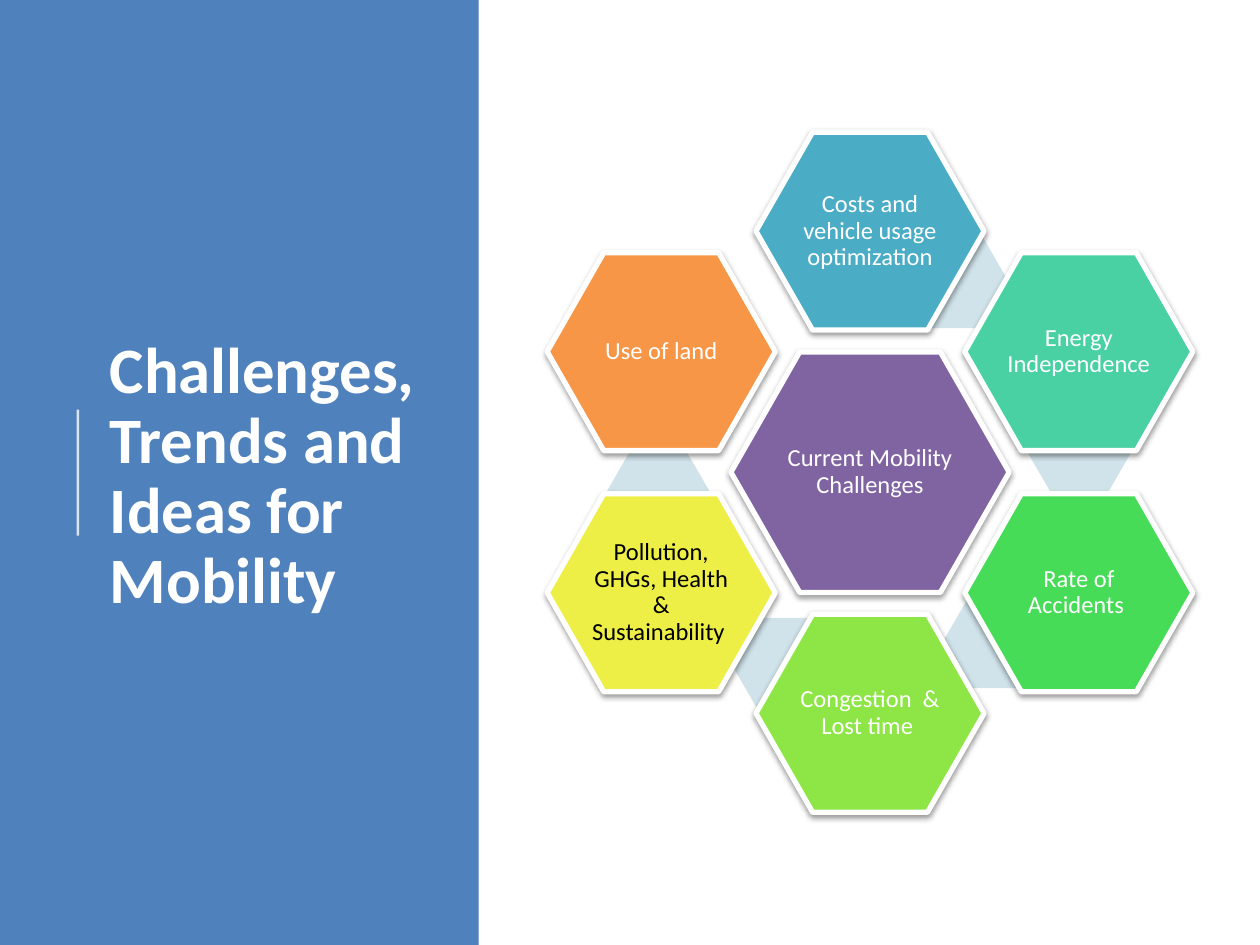
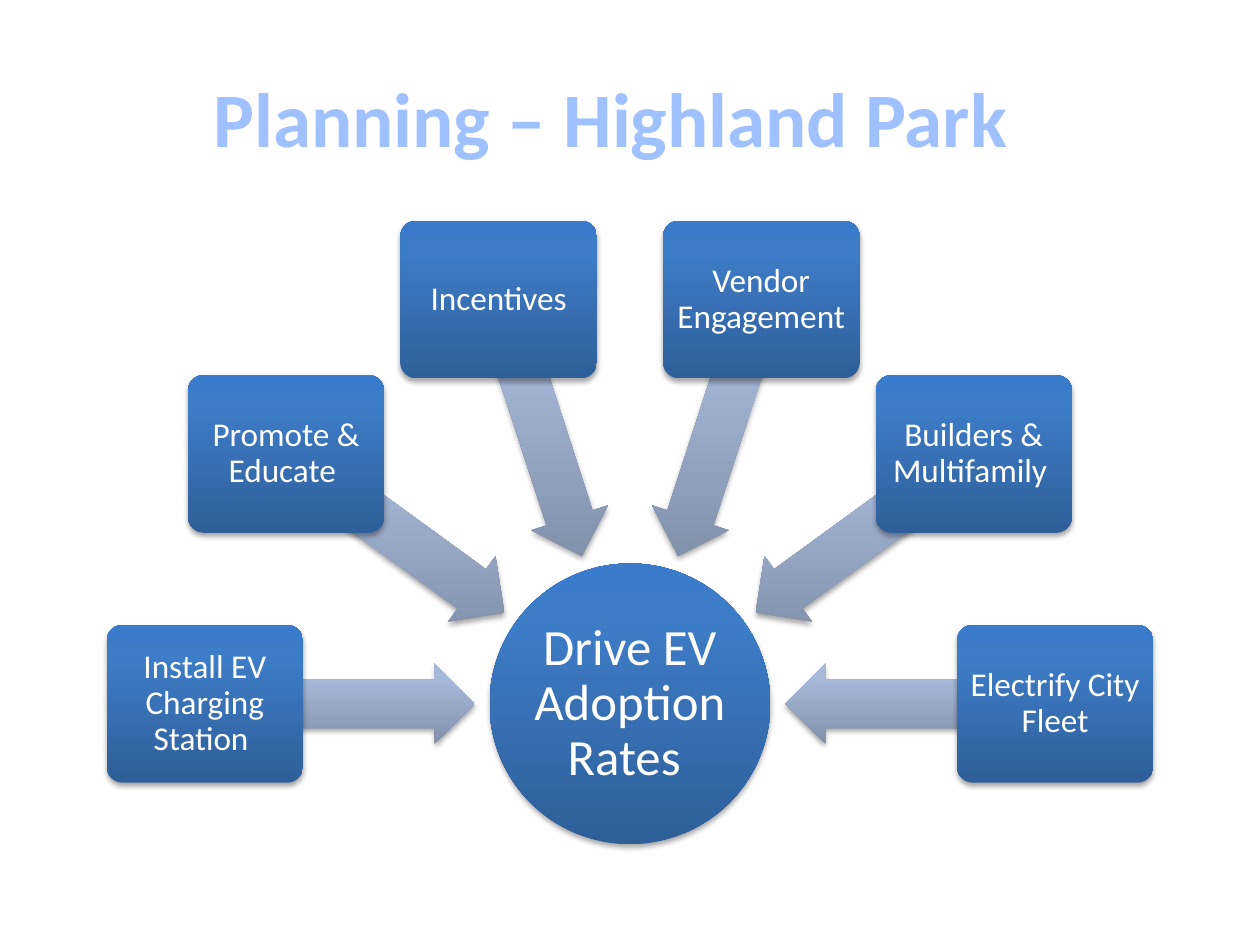
from math import cos, radians, sin

from lxml import etree
from pptx import Presentation
from pptx.dml.color import RGBColor
from pptx.enum import shapes, text
from pptx.oxml import parse_xml
from pptx.oxml.ns import nsdecls, qn
from pptx.util import Cm, Pt

FONT = "Calibri"
WHITE, BLACK = "FFFFFF", "000000"
PANEL, PALE, SKY = "4F81BD", "D0E3EA", "A0C1FF"
BLUE = [(0, "2F5F99"), (80, "3D7CC7"), (100, "3A7CCB")]
GREY = [(0, "818FA8"), (80, "A7B9DA"), (100, "A7BADC")]
KIND = shapes.MSO_SHAPE

# Label, fill and text colour, clockwise from the top
RING = [
    ("Costs and vehicle usage optimization", "4BACC6", WHITE),
    ("Energy Independence ", "49D1A3", WHITE),
    ("Rate of Accidents ", "47DC57", WHITE),
    ("Congestion  & Lost time ", "8DE646", WHITE),
    ("Pollution, GHGs, Health & Sustainability ", "EEEF46", BLACK),
    ("Use of land", "F79646", WHITE),
]
# Offsets of the pale hexagons from the middle of the ring
LINKS = [(1.75, -3.82), (4.22, -0.42), (2.51, 3.44), (-1.75, 3.85), (-4.27, 0.42)]
# Labels from left to right over the hub
CARDS = ["Install EV Charging Station ", "Promote & Educate ", "Incentives",
         "Vendor Engagement", "Builders & Multifamily ", "Electrify City Fleet"]


def color(code):
    return RGBColor.from_string(code)


def polar(mid, dist, angle):
    """Point at a clockwise angle from the right of mid."""
    turn = radians(angle)
    return mid[0] + dist * cos(turn), mid[1] + dist * sin(turn)


def paint(shape, fill):
    """Solid fill from a code, upward gradient from a list of stops."""
    if isinstance(fill, str):
        shape.fill.solid()
        shape.fill.fore_color.rgb = color(fill)
        return
    shape.fill.gradient()
    old = shape.element.spPr.find(qn("a:gradFill"))
    stops = "".join(f'<a:gs pos="{pos * 1000}"><a:srgbClr val="{code}"/></a:gs>'
                    for pos, code in fill)
    new = parse_xml(f'<a:gradFill {nsdecls("a")} rotWithShape="0"><a:gsLst>{stops}'
                    '</a:gsLst><a:lin ang="16200000" scaled="0"/></a:gradFill>')
    old.getparent().replace(old, new)


def shade(shape, alpha, dist):
    """Soft shadow straight below the shape."""
    shape.element.spPr.find(qn("a:effectLst")).append(parse_xml(
        f'<a:outerShdw {nsdecls("a")} blurRad="40000" dist="{dist}" dir="5400000" '
        f'rotWithShape="0"><a:srgbClr val="{BLACK}"><a:alpha val="{alpha * 1000}"/>'
        '</a:srgbClr></a:outerShdw>'))


def place(slide, kind, mid, size, fill, adjust=(), edge=None):
    """Shape centred on mid, all lengths in centimetres."""
    wide, high = size
    shape = slide.shapes.add_shape(kind, Cm(mid[0] - wide / 2), Cm(mid[1] - high / 2),
                                   Cm(wide), Cm(high))
    for i, value in enumerate(adjust):
        shape.adjustments[i] = value
    paint(shape, fill)
    if edge:
        shape.line.color.rgb = color(edge)
        shape.line.width = Pt(3)
    else:
        shape.line.fill.background()
    shape.shadow.inherit = False
    return shape


def style(para, size, code, align, bold=False, space=0.9):
    para.alignment = align
    para.line_spacing = space
    font = para.font
    font.name, font.size, font.bold = FONT, Pt(size), bold
    font.color.rgb = color(code)


def label(shape, words, size, code=WHITE, inset=0.05):
    frame = shape.text_frame
    frame.word_wrap = True
    frame.vertical_anchor = text.MSO_ANCHOR.MIDDLE
    frame.margin_left = frame.margin_right = Cm(inset)
    frame.margin_top = frame.margin_bottom = Cm(inset)
    frame.text = words
    style(frame.paragraphs[0], size, code, text.PP_ALIGN.CENTER)


def head(slide, words, box, size, code, align, space):
    title = slide.shapes.title
    title.left, title.top, title.width, title.height = map(Cm, box)
    frame = title.text_frame
    frame.text = words
    frame.word_wrap = True
    frame.auto_size = text.MSO_AUTO_SIZE.NONE
    frame.vertical_anchor = text.MSO_ANCHOR.MIDDLE
    style(frame.paragraphs[0], size, code, align, True, space)
    return title


def side(slide, words, wide, high):
    """Blue side panel with the title and a thin rule."""
    panel = place(slide, KIND.RECTANGLE, (wide / 2, high / 2), (wide, high), PANEL)
    title = head(slide, words, (1.96, 1.98, 7.01, 15.29), 37, WHITE,
                 text.PP_ALIGN.LEFT, 0.9)
    title.element.addprevious(panel.element)
    rule = slide.shapes.add_connector(shapes.MSO_CONNECTOR.STRAIGHT,
                                      Cm(1.57), Cm(10.8), Cm(1.57), Cm(8.26))
    rule.line.color.rgb = color(WHITE)
    rule.line.width = Pt(1.5)
    tint = rule.element.spPr.find(".//" + qn("a:srgbClr"))
    etree.SubElement(tint, qn("a:alpha")).set("val", "80000")
    etree.SubElement(rule.element.spPr, qn("a:effectLst"))


def comb(slide, mid):
    """Six hexagons around a larger one."""
    def cell(spot, size, fill, words, code=WHITE):
        shape = place(slide, KIND.HEXAGON, spot, size, fill, (0.286, 1.155), WHITE)
        shade(shape, 38, 20000)
        label(shape, words, 14, code)

    for dx, dy in LINKS:
        place(slide, KIND.HEXAGON, (mid[0] + dx, mid[1] + dy), (2.11, 1.83),
              PALE, (0.289, 1.155))
    cell(mid, (5.61, 4.85), "8064A2", "Current Mobility Challenges")
    for i, (words, fill, code) in enumerate(RING):
        cell(polar(mid, 4.86, 60 * i - 90), (4.6, 3.99), fill, words, code)


def fan(slide, mid):
    """Cards on a half circle, each with an arrow to the hub."""
    hub = place(slide, KIND.OVAL, mid, (5.66, 5.66), BLUE)
    shade(hub, 35, 23000)
    label(hub, "Drive EV Adoption Rates ", 29)
    step = 180 / (len(CARDS) - 1)
    for i, words in enumerate(CARDS):
        angle = 180 + step * i
        arrow = place(slide, KIND.LEFT_ARROW, polar(mid, 5.85, angle), (5.44, 1.63),
                      GREY, (0.6, 0.5))
        arrow.rotation = angle % 360
        card = place(slide, KIND.ROUNDED_RECTANGLE, polar(mid, 8.57, angle),
                     (3.96, 3.18), BLUE, (0.1,))
        shade(arrow, 35, 23000)
        shade(card, 35, 23000)
        label(card, words, 19, inset=0.1)


def main():
    deck = Presentation()
    deck.slide_width, deck.slide_height = Cm(25.4), Cm(19.05)
    plain = deck.slide_layouts.get_by_name("Title Only")

    # Challenges
    slide = deck.slides.add_slide(plain)
    side(slide, "Challenges, Trends and Ideas for Mobility", 9.65, 19.05)
    comb(slide, (17.54, 9.52))

    # Planning
    slide = deck.slides.add_slide(plain)
    head(slide, "Planning – Highland Park", (0.89, 0.76, 22.86, 3.18), 44, SKY,
         text.PP_ALIGN.CENTER, 1.0)
    fan(slide, (12.7, 14.19))

    deck.save("out.pptx")


if __name__ == "__main__":
    main()
